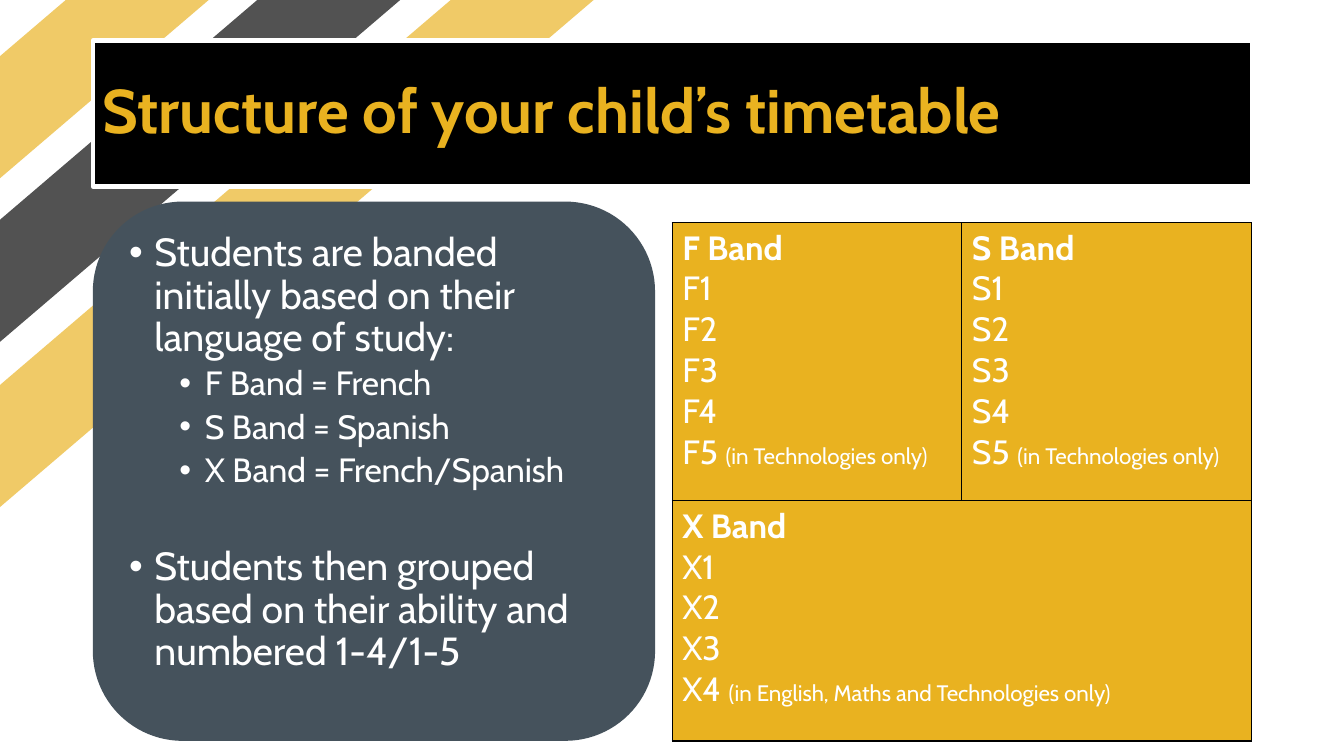
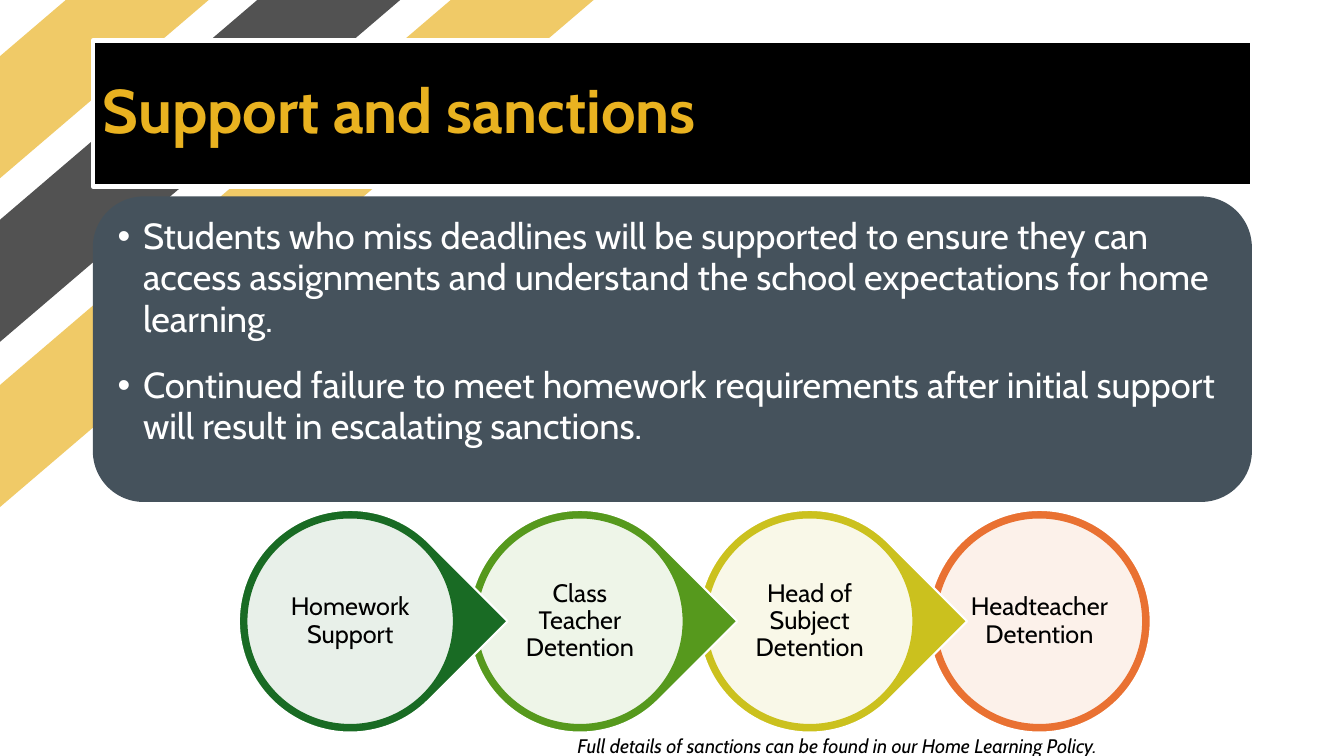
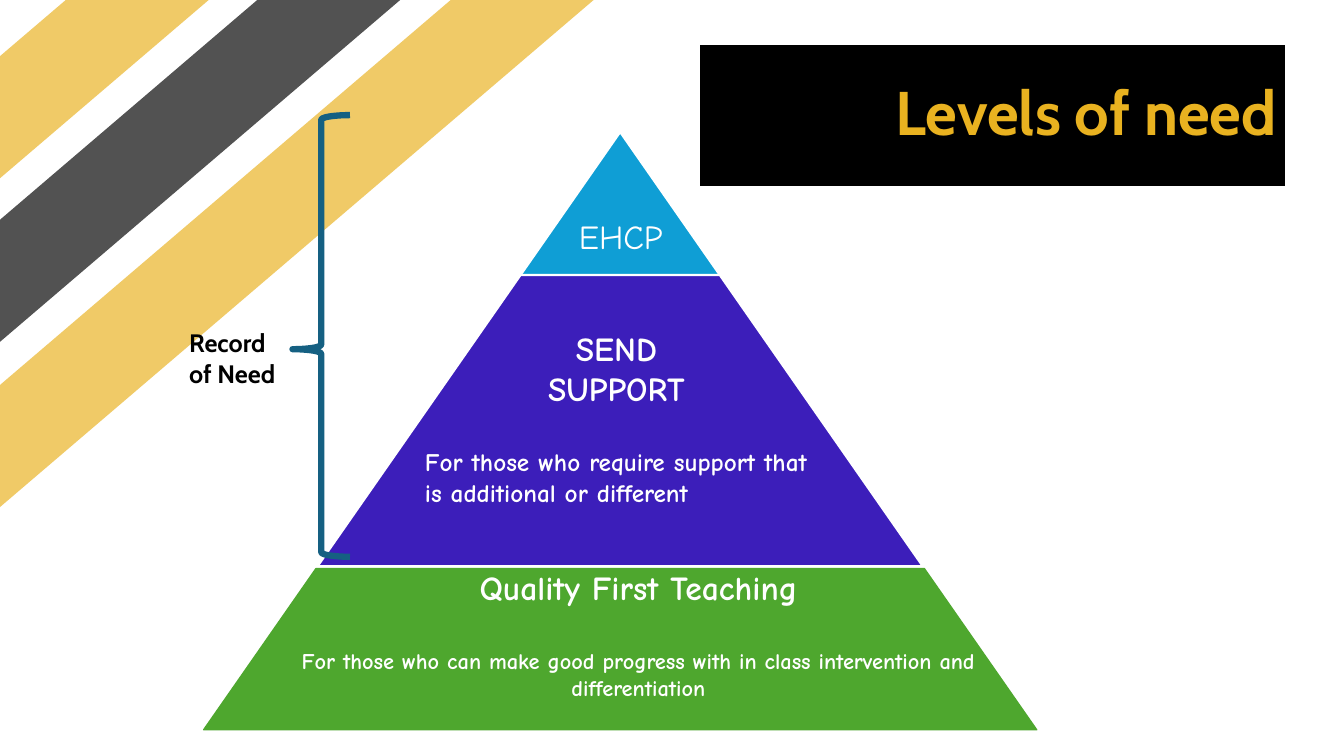
"""Build three school information slides with a shared striped, black-title style."""
from dataclasses import dataclass
from typing import NamedTuple, Optional

from lxml import etree
from pptx import Presentation
from pptx import util as u
from pptx.dml import color as dml
from pptx.enum import shapes as kinds
from pptx.enum import text as align
from pptx.oxml import ns

Kind = kinds.MSO_SHAPE
Anchor = align.MSO_ANCHOR
Align = align.PP_ALIGN


@dataclass(frozen=True)
class Theme:
    font: str = "Cabin"
    hand_font: str = "Comic Neue"
    gold: str = "E9B220"
    black: str = "000000"
    white: str = "FFFFFF"
    slate: str = "45525C"
    brace: str = "156082"
    dark_green: str = "196B24"
    green: str = "56991D"
    olive: str = "CBC11E"
    orange: str = "E97132"
    sky: str = "0F9ED5"
    violet: str = "3C1EBA"
    grass: str = "4EA72E"
    title: float = 44
    body: float = 28
    body_wide: float = 25.9
    heading: float = 24
    label: float = 18
    note: float = 16
    footnote: float = 14


THEME = Theme()


class Box(NamedTuple):
    left: float
    top: float
    width: float
    height: float

    def inset(self, amount: float) -> "Box":
        return Box(self.left + amount, self.top + amount,
                   self.width - 2 * amount, self.height - 2 * amount)

    def lengths(self) -> list:
        return [u.Cm(value) for value in self]


@dataclass(frozen=True)
class Line:
    text: str
    size: float
    color: str = THEME.white
    font: str = THEME.font
    bold: bool = False
    italic: bool = False
    note: str = ""
    alignment: Align = Align.LEFT
    spacing: float = 1.0
    before: float = 0
    after: float = 0
    bullet_level: Optional[int] = None


class Band(NamedTuple):
    box: Box
    color: str


class Stage(NamedTuple):
    text: str
    color: str
    kind: Kind


class Tier(NamedTuple):
    top: float
    bottom: float
    color: str
    outline: str
    outline_width: float


BANDS = [
    Band(Box(-6.4, 0.58, 15.62, 2.34), THEME.gold),
    Band(Box(-3.81, 2.49, 15.62, 2.34), THEME.black),
    Band(Box(-4.62, 4.45, 22.4, 2.34), THEME.gold),
]
WIDE_TITLE = Box(2.34, 1.02, 29.21, 3.68)
RIGHT_TITLE = Box(17.6, 1.07, 14.83, 3.68)

STAGES = [
    Stage("Homework Support", THEME.dark_green, Kind.TEAR),
    Stage("Class Teacher Detention", THEME.green, Kind.TEAR),
    Stage("Head of Subject Detention", THEME.olive, Kind.TEAR),
    Stage("Headteacher Detention", THEME.orange, Kind.OVAL),
]
FIRST_STAGE = Box(6.02, 12.85, 5.61, 5.61)
STAGE_PITCH = 5.79

TIERS = [
    Tier(3.33, 7.01, THEME.sky, THEME.white, 1.5),
    Tier(6.93, 14.27, THEME.violet, THEME.white, 1.5),
    Tier(14.33, 18.39, THEME.grass, THEME.grass, 1),
]
APEX_X, APEX_Y, SLOPE = 15.63, 3.33, 0.697


def rgb(value: str) -> dml.RGBColor:
    return dml.RGBColor.from_string(value)


def add_shape(slide, kind: Kind, box: Box, fill: Optional[str] = None,
              outline: Optional[str] = None, outline_width: float = 1.5,
              rotation: float = 0, opacity: int = 100):
    shape = slide.shapes.add_shape(kind, *box.lengths())
    shape.shadow.inherit = False
    shape.rotation = rotation
    if fill:
        shape.fill.solid()
        shape.fill.fore_color.rgb = rgb(fill)
    else:
        shape.fill.background()
    if outline:
        shape.line.color.rgb = rgb(outline)
        shape.line.width = u.Pt(outline_width)
    else:
        shape.line.fill.background()
    if opacity < 100:
        fill_color = shape.element.spPr.find(ns.qn("a:solidFill"))[0]
        etree.SubElement(fill_color, ns.qn("a:alpha"), val=str(opacity * 1000))
    return shape


def add_bullet(paragraph, level: int) -> None:
    paragraph.level = level
    properties = paragraph._p.get_or_add_pPr()
    properties.set("marL", str(u.Cm(0.64 + 1.27 * level)))
    properties.set("indent", str(-u.Cm(0.64)))
    etree.SubElement(properties, ns.qn("a:buFont"), typeface="Arial")
    etree.SubElement(properties, ns.qn("a:buChar"), char="•")


def write_lines(text_frame, lines: list[Line]) -> None:
    text_frame.word_wrap = True
    text_frame.text = "\n".join(line.text for line in lines)
    for paragraph, line in zip(text_frame.paragraphs, lines):
        if line.bullet_level is not None:
            add_bullet(paragraph, line.bullet_level)
        paragraph.alignment = line.alignment
        paragraph.line_spacing = line.spacing
        paragraph.space_before = u.Pt(line.before)
        paragraph.space_after = u.Pt(line.after)
        if line.note:
            paragraph.add_run().text = line.note
        for run, size in zip(paragraph.runs, (line.size, THEME.note)):
            run.font.name = line.font
            run.font.size = u.Pt(size)
            run.font.bold = line.bold
            run.font.italic = line.italic
            run.font.color.rgb = rgb(line.color)


def add_text(slide, box: Box, lines: list[Line], anchor: Anchor = Anchor.TOP,
             margin: Optional[float] = None) -> None:
    text_frame = slide.shapes.add_textbox(*box.lengths()).text_frame
    text_frame.vertical_anchor = anchor
    if margin is not None:
        text_frame.margin_left = text_frame.margin_right = u.Cm(margin)
        text_frame.margin_top = text_frame.margin_bottom = u.Cm(margin)
    write_lines(text_frame, lines)


def add_base_slide(presentation):
    slide = presentation.slides.add_slide(presentation.slide_layouts[6])
    for band in BANDS:
        add_shape(slide, Kind.RECTANGLE, band.box, band.color, rotation=319.5, opacity=68)
    return slide


def add_title(slide, title: str, box: Box = WIDE_TITLE, alignment: Align = Align.LEFT) -> None:
    shape = add_shape(slide, Kind.RECTANGLE, box, THEME.black, THEME.white, 3)
    shape.text_frame.vertical_anchor = Anchor.MIDDLE
    write_lines(shape.text_frame, [Line(title, THEME.title, THEME.gold, bold=True,
                                        alignment=alignment, spacing=0.9)])


def add_panel(slide, box: Box, lines: list[Line]) -> None:
    shape = add_shape(slide, Kind.ROUNDED_RECTANGLE, box, THEME.slate)
    shape.text_frame.vertical_anchor = Anchor.TOP
    write_lines(shape.text_frame, lines)


def band_lines(letter: str, count: int, note: str) -> list[Line]:
    groups = [f"{letter}{number}" for number in range(1, count)]
    return [
        Line(f"{letter} Band", THEME.heading, bold=True),
        *[Line(group, THEME.heading) for group in groups],
        Line(f"{letter}{count} ", THEME.heading, note=note),
    ]


def style_cell(cell) -> None:
    properties = cell._tc.get_or_add_tcPr()
    for side in ("lnL", "lnR", "lnT", "lnB"):
        border = etree.SubElement(properties, ns.qn(f"a:{side}"), w=str(u.Pt(1)))
        fill = etree.SubElement(border, ns.qn("a:solidFill"))
        etree.SubElement(fill, ns.qn("a:srgbClr"), val=THEME.black)
    cell.fill.solid()
    cell.fill.fore_color.rgb = rgb(THEME.gold)


def add_band_table(slide, box: Box, row_heights: list[float]) -> None:
    table = slide.shapes.add_table(2, 2, *box.lengths()).table
    table.first_row = table.horz_banding = False
    for column in table.columns:
        column.width = u.Cm(box.width / 2)
    for row, height in zip(table.rows, row_heights):
        row.height = u.Cm(height)
    for cell in table.iter_cells():
        style_cell(cell)
    table.cell(1, 0).merge(table.cell(1, 1))
    technologies = "(in Technologies only)"
    write_lines(table.cell(0, 0).text_frame, band_lines("F", 5, technologies))
    write_lines(table.cell(0, 1).text_frame, band_lines("S", 5, technologies))
    write_lines(table.cell(1, 0).text_frame,
                band_lines("X", 4, "(in English, Maths and Technologies only)"))


def add_stage(slide, stage: Stage, index: int) -> None:
    ring = FIRST_STAGE._replace(left=FIRST_STAGE.left + index * STAGE_PITCH)
    rotation = 45 if stage.kind == Kind.TEAR else 0
    add_shape(slide, stage.kind, ring, stage.color, THEME.white, rotation=rotation)
    add_shape(slide, Kind.OVAL, ring.inset(0.19), THEME.white, stage.color, opacity=90)
    add_text(slide, ring.inset(0.94),
             [Line(stage.text, THEME.label, THEME.black, alignment=Align.CENTER, spacing=0.9)],
             Anchor.MIDDLE, 0.08)


def add_tier(slide, tier: Tier) -> None:
    width = 2 * SLOPE * (tier.bottom - APEX_Y)
    height = tier.bottom - tier.top
    shape = add_shape(slide, Kind.TRAPEZOID,
                      Box(APEX_X - width / 2, tier.top, width, height),
                      tier.color, tier.outline, tier.outline_width)
    shape.adjustments[0] = SLOPE


def build_timetable(presentation) -> None:
    slide = add_base_slide(presentation)
    add_title(slide, "Structure of your child’s timetable")
    languages = ["F Band = French", "S Band = Spanish", "X Band = French/Spanish"]
    add_panel(slide, Box(2.34, 5.08, 14.17, 13.59), [
        Line("Students are banded initially based on their language of study:",
             THEME.body, spacing=0.9, bullet_level=0),
        *[Line(language, THEME.heading, spacing=0.9, before=5, bullet_level=1)
          for language in languages],
        Line("Students then grouped based on their ability and numbered 1-4/1-5",
             THEME.body, spacing=0.9, before=41, bullet_level=0),
    ])
    add_band_table(slide, Box(16.94, 5.61, 14.6, 13.06), [7.01, 6.05])


def build_sanctions(presentation) -> None:
    slide = add_base_slide(presentation)
    for index, stage in reversed(list(enumerate(STAGES))):
        add_stage(slide, stage, index)
    add_text(slide, Box(14.3, 18.29, 18, 0.76), [
        Line("Full details of sanctions can be found in our Home Learning Policy.",
             THEME.footnote, THEME.black, italic=True, spacing=1.15)])
    add_title(slide, "Support and sanctions")
    points = [
        "Students who miss deadlines will be supported to ensure they can access "
        "assignments and understand the school expectations for home learning.",
        "Continued failure to meet homework requirements after initial support "
        "will result in escalating sanctions.",
    ]
    add_panel(slide, Box(2.34, 4.95, 29.21, 7.7), [
        Line(point, THEME.body_wide, spacing=0.95, before=10 if index else 0,
             after=8, bullet_level=0)
        for index, point in enumerate(points)])


def build_levels(presentation) -> None:
    slide = add_base_slide(presentation)
    for tier in TIERS:
        add_tier(slide, tier)
    hand = THEME.hand_font
    add_text(slide, Box(13.08, 5.4, 5.13, 1.25),
             [Line("EHCP", THEME.heading, font=hand, alignment=Align.CENTER, spacing=0.9)],
             Anchor.MIDDLE, 0.1)
    add_text(slide, Box(7.29, 14.17, 17.6, 4.37), [
        Line("Quality First Teaching", THEME.heading, font=hand, bold=True,
             alignment=Align.CENTER),
        Line("For those who can make good progress with in class intervention and "
             "differentiation", THEME.note, font=hand, bold=True,
             alignment=Align.CENTER, before=28),
    ])
    add_text(slide, Box(10.46, 11.13, 10.39, 1.8), [
        Line("For those who require support that is additional or different",
             THEME.label, font=hand, bold=True)])
    add_text(slide, Box(12.93, 8.13, 5.21, 2.31), [
        Line("SEND SUPPORT", THEME.heading, font=hand, bold=True, alignment=Align.CENTER)])
    brace = add_shape(slide, Kind.RIGHT_BRACE, Box(7.37, 2.9, 1.45, 11.13),
                      outline=THEME.brace, outline_width=4.5, rotation=180)
    brace.adjustments[0] = 0.08
    brace.adjustments[1] = 0.47
    add_text(slide, Box(4.52, 8.13, 2.82, 1.8),
             [Line("Record of Need", THEME.label, THEME.black, bold=True)])
    add_title(slide, "Levels of need", RIGHT_TITLE, Align.RIGHT)


def main() -> None:
    presentation = Presentation()
    presentation.slide_width = u.Cm(33.87)
    presentation.slide_height = u.Cm(19.05)
    build_timetable(presentation)
    build_sanctions(presentation)
    build_levels(presentation)
    presentation.save("out.pptx")


if __name__ == "__main__":
    main()
